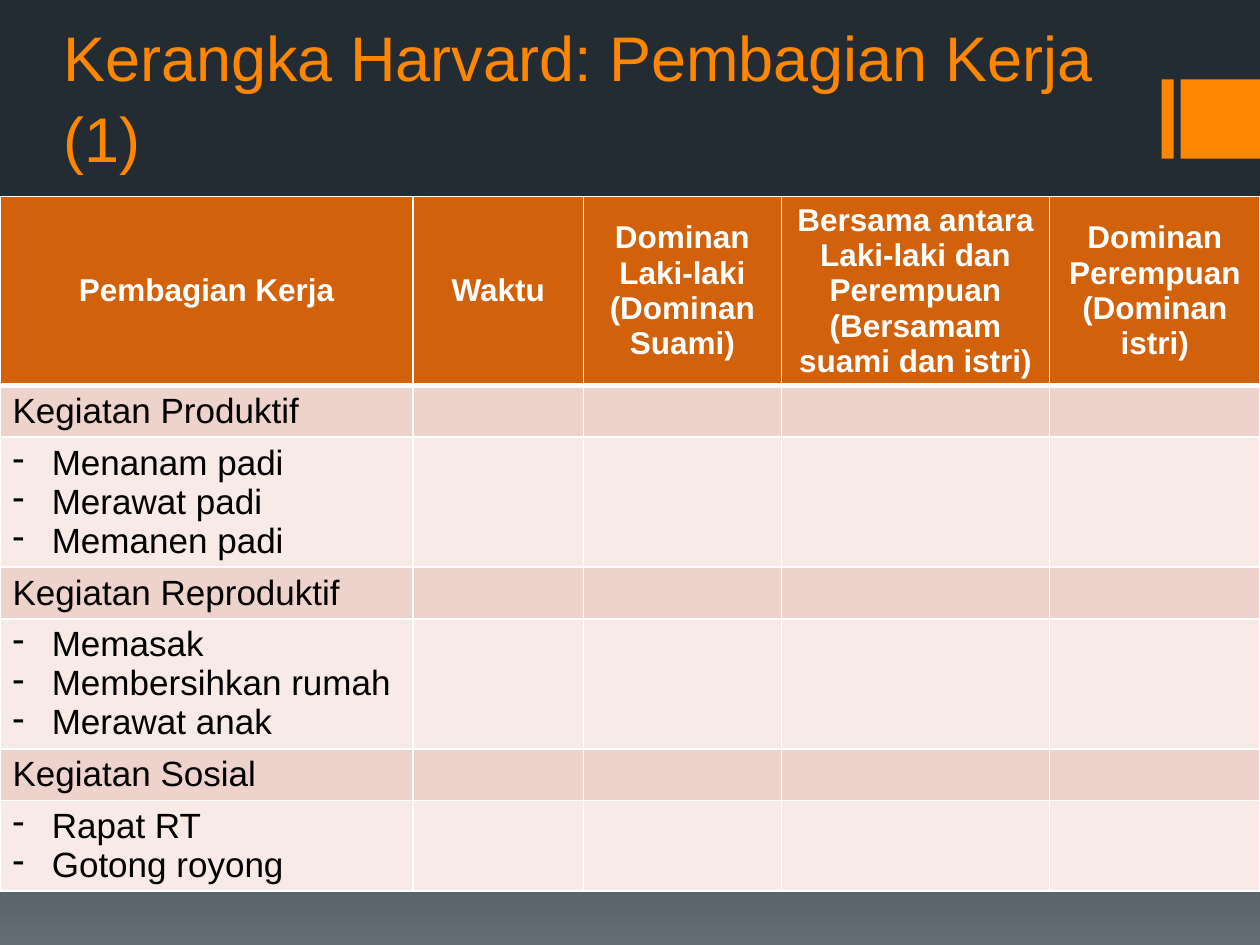
from copy import deepcopy

from pptx import Presentation
from pptx.dml.color import RGBColor
from pptx.enum.shapes import MSO_SHAPE
from pptx.enum.text import MSO_ANCHOR, MSO_AUTO_SIZE, PP_ALIGN
from pptx.oxml.ns import qn
from pptx.util import Cm, Pt
from lxml.etree import SubElement

FONT = "Arial"
ORANGE, HEADER, GROUP, DETAIL = "FF8600", "D2610C", "EED2CC", "F7EAE7"
WHITE, BLACK = "FFFFFF", "000000"
GRADIENT = [(0, "242C33"), (0.65, "273037"), (1, "636D76")]
COL_WIDTHS = [8.33, 3.43, 3.99, 5.41, 4.24]
HEADINGS = [
    "Pembagian Kerja",
    "Waktu",
    "Dominan Laki-laki (Dominan Suami)",
    "Bersama antara Laki-laki dan Perempuan (Bersamam suami dan istri)",
    "Dominan Perempuan (Dominan istri)",
]
ACTIVITIES = {
    "Kegiatan Produktif": ["Menanam padi", "Merawat padi", "Memanen padi"],
    "Kegiatan Reproduktif": ["Memasak", "Membersihkan rumah", "Merawat anak"],
    "Kegiatan Sosial": ["Rapat RT", "Gotong royong"],
}


def rgb(color):
    """Return the colour for a hex string."""
    return RGBColor.from_string(color)


def format_text(tf, size, color, bold=False, align=PP_ALIGN.LEFT):
    """Format every paragraph and run of a text frame."""
    for p in tf.paragraphs:
        p.alignment = align
        for r in p.runs:
            r.font.name, r.font.size, r.font.bold = FONT, Pt(size), bold
            r.font.color.rgb = rgb(color)


def set_background(s):
    """Fill the background with the vertical gradient."""
    fill = s.background.fill
    fill.gradient()
    fill.gradient_angle = 270
    stops = s.element.find(".//" + qn("a:gsLst"))
    stops.append(deepcopy(stops[-1]))
    for stop, (position, color) in zip(fill.gradient_stops, GRADIENT):
        stop.position = position
        stop.color.rgb = rgb(color)


def add_bar(s, left, width):
    """Add one orange bar beside the title."""
    sp = s.shapes.add_shape(MSO_SHAPE.RECTANGLE, Cm(left), Cm(1.6), Cm(width), Cm(1.6))
    sp.shadow.inherit = False
    sp.fill.solid()
    sp.fill.fore_color.rgb = rgb(ORANGE)
    sp.line.fill.background()


def set_title(s, text):
    """Place and format the title."""
    sp = s.shapes.title
    sp.left, sp.top, sp.width, sp.height = Cm(1.02), Cm(0.46), Cm(22.1), Cm(3.2)
    tf = sp.text_frame
    tf.text = text
    tf.word_wrap = True
    tf.auto_size = MSO_AUTO_SIZE.NONE
    tf.vertical_anchor = MSO_ANCHOR.BOTTOM
    tf.paragraphs[0].line_spacing = 1.07
    format_text(tf, 36, ORANGE)


def style_cell(cell, fill, bottom=1):
    """Give a cell white borders and a solid fill."""
    tcPr = cell._tc.get_or_add_tcPr()
    for side, width in (("L", 1), ("R", 1), ("T", 1), ("B", bottom)):
        ln = SubElement(tcPr, qn("a:ln" + side), w=str(Pt(width)))
        SubElement(SubElement(ln, qn("a:solidFill")), qn("a:srgbClr"), val=WHITE)
    cell.fill.solid()
    cell.fill.fore_color.rgb = rgb(fill)


def add_dashes(tf):
    """Turn the paragraphs into a dashed list."""
    for p in tf.paragraphs:
        pPr = p._p.get_or_add_pPr()
        pPr.set("marL", str(Cm(0.79)))
        pPr.set("indent", str(-Cm(0.79)))
        SubElement(pPr, qn("a:buChar"), char="-")


def fill_row(table, i, height, texts, fill, bottom=1):
    """Set the height, texts and style of one row."""
    table.rows[i].height = Cm(height)
    for cell, text in zip(table.rows[i].cells, texts):
        cell.text_frame.text = text
        style_cell(cell, fill, bottom)


def add_activity_table(s):
    """Add the table of activities by who does them."""
    rows, cols = 1 + 2 * len(ACTIVITIES), len(COL_WIDTHS)
    table = s.shapes.add_table(rows, cols, 0, Cm(3.96), Cm(25.4), Cm(14)).table
    for column, width in zip(table.columns, COL_WIDTHS):
        column.width = Cm(width)
    fill_row(table, 0, 3.81, HEADINGS, HEADER, bottom=3)
    for cell in table.rows[0].cells:
        cell.vertical_anchor = MSO_ANCHOR.MIDDLE
        format_text(cell.text_frame, 18, WHITE, True, PP_ALIGN.CENTER)
    blanks = [""] * (cols - 1)
    for n, (group, items) in enumerate(ACTIVITIES.items()):
        i = 1 + 2 * n
        fill_row(table, i, 1.04, [group] + blanks, GROUP)
        fill_row(table, i + 1, 0.25 + 0.79 * len(items), ["\n".join(items)] + blanks, DETAIL)
        for row in (i, i + 1):
            format_text(table.cell(row, 0).text_frame, 20, BLACK)
        add_dashes(table.cell(i + 1, 0).text_frame)


def main():
    """Build the slide and save it."""
    prs = Presentation()
    prs.slide_width, prs.slide_height = Cm(25.4), Cm(19.05)
    s = prs.slides.add_slide(prs.slide_layouts[5])
    set_background(s)
    add_bar(s, 23.42, 0.24)
    add_bar(s, 23.8, 1.6)
    set_title(s, "Kerangka Harvard: Pembagian Kerja (1)")
    add_activity_table(s)
    prs.save("out.pptx")


if __name__ == "__main__":
    main()
